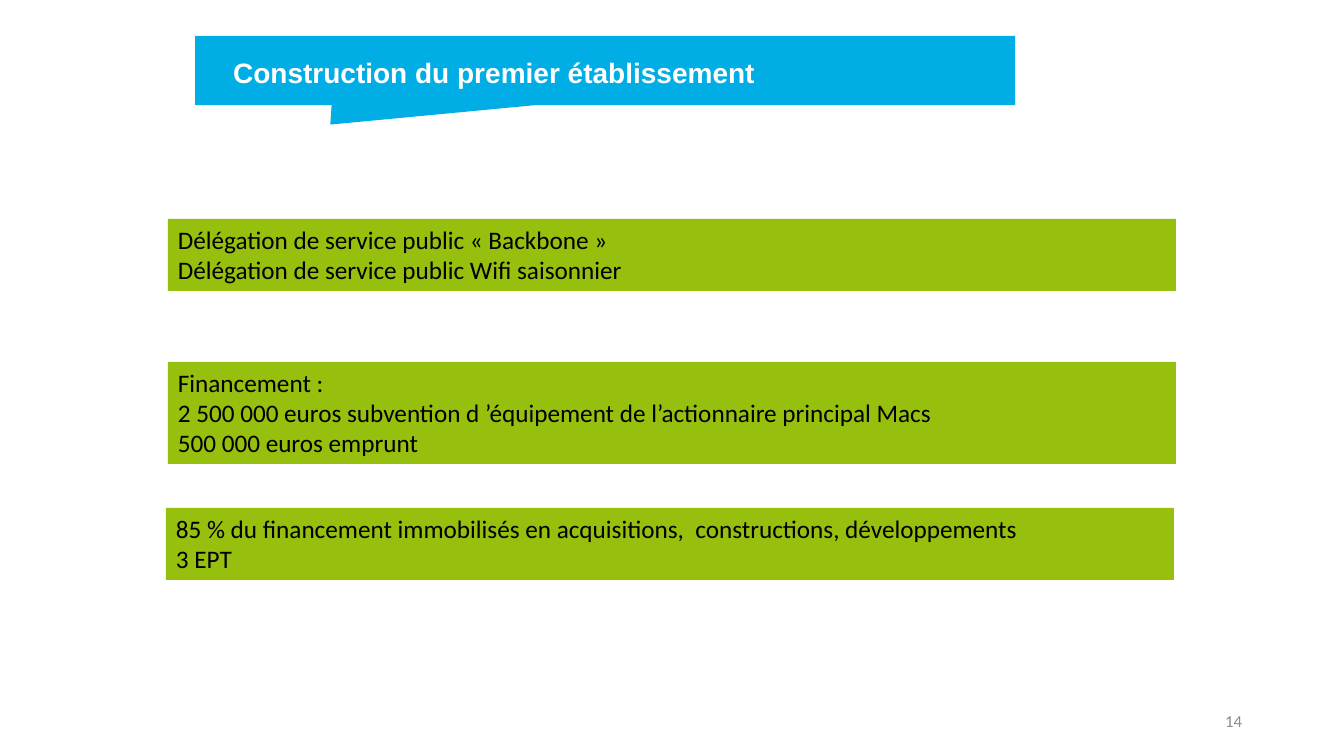
from pptx import Presentation
from pptx.dml.color import RGBColor
from pptx.enum.shapes import MSO_SHAPE as SHAPE
from pptx.enum.text import MSO_ANCHOR as ANCHOR, PP_ALIGN as ALIGN
from pptx.util import Pt

EMU_PER_PX = 914400 / 100.8
COLORS = {
    "blue": "00ADE5",
    "green": "97BF0D",
    "white": "FFFFFF",
    "black": "000000",
    "grey": "8C8C8C",
}
PANELS = [
    (168, 219, 72, [
        "Délégation de service public « Backbone »",
        "Délégation de service public Wifi saisonnier",
    ]),
    (168, 362, 102, [
        "Financement :",
        "2 500 000 euros subvention d ’équipement de l’actionnaire principal Macs",
        "500 000 euros emprunt",
    ]),
    (166, 508, 72, [
        "85 % du financement immobilisés en acquisitions,  constructions, développements",
        "3 EPT",
    ]),
]


def px(n):
    return round(n * EMU_PER_PX)


def rgb(name):
    return RGBColor.from_string(COLORS[name])


def write(sp, lines, size=18, font="Calibri", color="black", bold=False,
          align=ALIGN.LEFT, anchor=ANCHOR.TOP):
    tf = sp.text_frame
    tf.word_wrap = True
    tf.vertical_anchor = anchor
    for i, line in enumerate(lines):
        p = tf.paragraphs[0] if i == 0 else tf.add_paragraph()
        p.alignment = align
        r = p.add_run()
        r.text = line
        r.font.size = Pt(size)
        r.font.name = font
        r.font.bold = bold
        r.font.color.rgb = rgb(color)


def add_filled(slide, kind, x, y, w, h, color):
    sp = slide.shapes.add_shape(kind, px(x), px(y), px(w), px(h))
    sp.shadow.inherit = False
    sp.fill.solid()
    sp.fill.fore_color.rgb = rgb(color)
    sp.line.fill.background()
    return sp


def add_title(slide, text):
    callout = add_filled(slide, SHAPE.RECTANGULAR_CALLOUT, 195, 36, 820, 69, "blue")
    callout.adjustments[0] = -0.335
    callout.adjustments[1] = 0.784
    title = slide.shapes.title
    title.left, title.top, title.width, title.height = px(223), px(50), px(820), px(44)
    write(title, [text], size=20, font="Arial", color="white", bold=True)
    callout._element.addnext(title._element)


def add_panel(slide, x, y, h, lines):
    write(add_filled(slide, SHAPE.RECTANGLE, x, y, 1008, h, "green"), lines)


def add_page_number(slide, number):
    sp = slide.shapes.add_textbox(px(950), px(701), px(302), px(40))
    write(sp, [number], size=12, color="grey", align=ALIGN.RIGHT, anchor=ANCHOR.MIDDLE)


def main():
    prs = Presentation()
    prs.slide_width, prs.slide_height = px(1344), px(756)
    slide = prs.slides.add_slide(prs.slide_layouts[5])
    add_page_number(slide, "14")
    add_title(slide, "Construction du premier établissement")
    for x, y, h, lines in PANELS:
        add_panel(slide, x, y, h, lines)
    prs.save("out.pptx")


if __name__ == "__main__":
    main()
